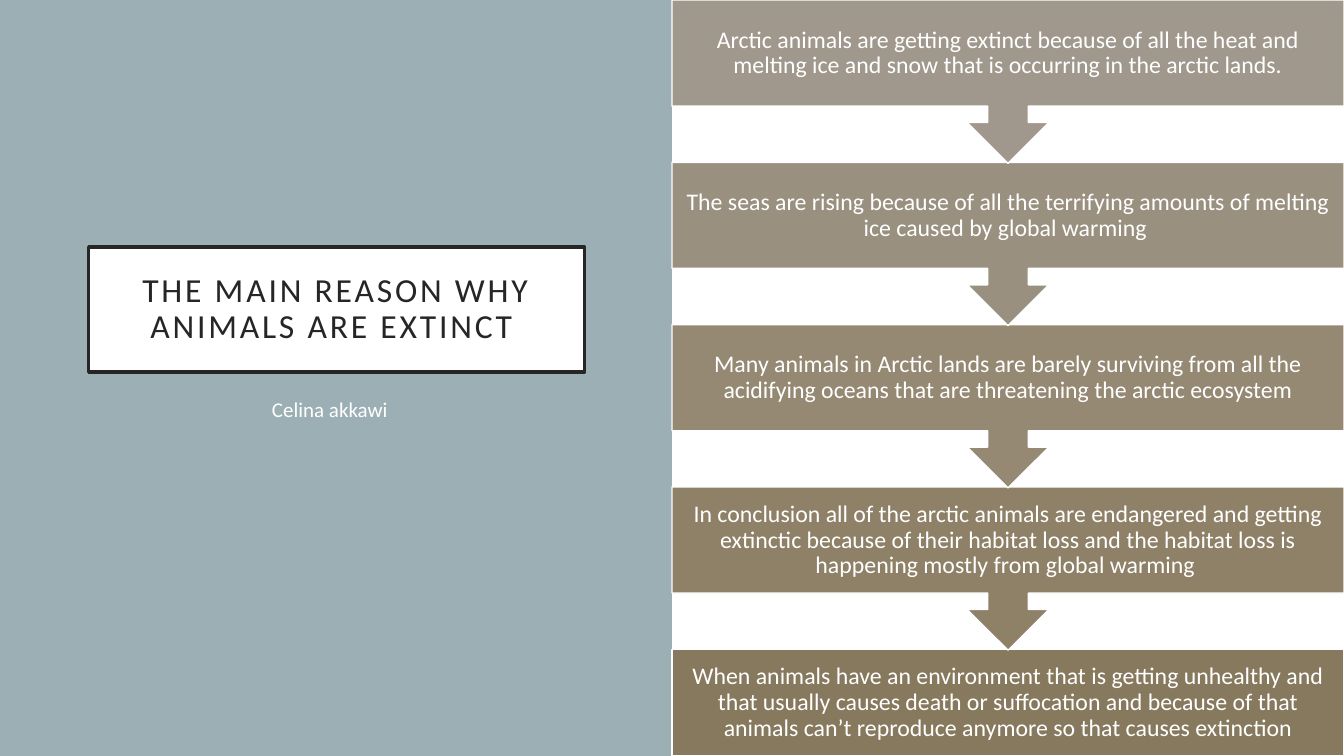
"""Build a slide with a title panel and a downward chain of five reasons."""
from dataclasses import dataclass

from pptx import Presentation
from pptx import util as u
from pptx.dml.color import RGBColor
from pptx.enum import shapes, text

WHITE = RGBColor(0xFF, 0xFF, 0xFF)
INK = RGBColor(0x26, 0x26, 0x26)
PANEL = RGBColor(0x9B, 0xAF, 0xB5)
FONT = "Calibri"
WIDTH, HEIGHT = u.Inches(13.33), u.Inches(7.5)
STEP, CALLOUT, BAND = 21.47, 21.6, 14.13


@dataclass(frozen=True)
class Frame:
    """A rectangle in percent of the slide's width and height."""
    left: float
    top: float
    width: float
    height: float

    def emu(self) -> tuple[int, int, int, int]:
        """Return the rectangle in slide units."""
        return (int(WIDTH * self.left / 100), int(HEIGHT * self.top / 100),
                int(WIDTH * self.width / 100), int(HEIGHT * self.height / 100))


@dataclass(frozen=True)
class Reason:
    """One link of the chain."""
    wording: str
    fill: RGBColor


REASONS = [
    Reason("Arctic animals are getting extinct because of all the heat and melting ice "
           "and snow that is occurring in the arctic lands.", RGBColor(0xA0, 0x98, 0x8C)),
    Reason("The seas are rising because of all the terrifying amounts of melting ice "
           "caused by global warming ", RGBColor(0x9A, 0x90, 0x80)),
    Reason("Many animals in Arctic lands are barely surviving from all the acidifying "
           "oceans that are threatening the arctic ecosystem", RGBColor(0x95, 0x89, 0x73)),
    Reason("In conclusion all of the arctic animals are endangered and getting extinctic "
           "because of their habitat loss and the habitat loss is happening mostly from "
           "global warming ", RGBColor(0x8F, 0x81, 0x67)),
    Reason("When animals have an environment that is getting unhealthy and that usually "
           "causes death or suffocation and because of that animals can’t reproduce "
           "anymore so that causes extinction", RGBColor(0x87, 0x79, 0x5D)),
]


def add_block(page, kind, frame: Frame, fill: RGBColor, line=None, weight: float = 1):
    """Draw a filled preset shape, outlined when a line colour is given."""
    block = page.shapes.add_shape(kind, *frame.emu())
    block.shadow.inherit = False
    block.fill.solid()
    block.fill.fore_color.rgb = fill
    if line is None:
        block.line.fill.background()
    else:
        block.line.color.rgb = line
        block.line.width = u.Pt(weight)
    return block


def write(box, wording: str, *, size: float, color: RGBColor = WHITE, inset=None,
          anchor=text.MSO_ANCHOR.MIDDLE, leading: float = 0.9, tracking: float = 0) -> None:
    """Put one centred paragraph into a shape or text box."""
    body = box.text_frame
    body.word_wrap = True
    body.vertical_anchor = anchor
    if inset is not None:
        body.margin_left = body.margin_right = u.Inches(inset)
        body.margin_top = body.margin_bottom = u.Inches(inset)
    para = body.paragraphs[0]
    para.alignment = text.PP_ALIGN.CENTER
    para.line_spacing = leading
    span = para.add_run()
    span.text = wording
    span.font.name = FONT
    span.font.size = u.Pt(size)
    span.font.color.rgb = color
    if tracking:
        span.font._element.set("spc", str(int(tracking * 100)))


def add_reason(page, row: int, reason: Reason) -> None:
    """Draw one link: an arrow callout, or a plain band for the last one."""
    band = Frame(50, row * STEP, 50, BAND)
    if row == len(REASONS) - 1:
        add_block(page, shapes.MSO_SHAPE.RECTANGLE, band, reason.fill, WHITE)
    else:
        arrow = add_block(page, shapes.MSO_SHAPE.UP_ARROW_CALLOUT,
                          Frame(50, row * STEP, 50, CALLOUT), reason.fill, WHITE)
        arrow.rotation = 180
    label = page.shapes.add_textbox(*band.emu())
    write(label, reason.wording, size=17, inset=0.13)


def main() -> None:
    """Assemble and save the deck."""
    deck = Presentation()
    deck.slide_width, deck.slide_height = WIDTH, HEIGHT
    page = deck.slides.add_slide(deck.slide_layouts[6])
    add_block(page, shapes.MSO_SHAPE.RECTANGLE, Frame(0, 0, 50, 100), PANEL)
    title = add_block(page, shapes.MSO_SHAPE.RECTANGLE,
                      Frame(6.6, 32.67, 36.9, 16.53), WHITE, INK, 2.5)
    write(title, "THE MAIN REASON WHY ANIMALS ARE EXTINCT ", size=24, color=INK,
          inset=0.2, tracking=2)
    for row, reason in reversed(list(enumerate(REASONS))):
        add_reason(page, row, reason)
    author = page.shapes.add_textbox(*Frame(9.15, 51.73, 31.13, 32).emu())
    write(author, "Celina akkawi ", size=15, anchor=text.MSO_ANCHOR.TOP, leading=1.0)
    deck.save("out.pptx")


if __name__ == "__main__":
    main()
